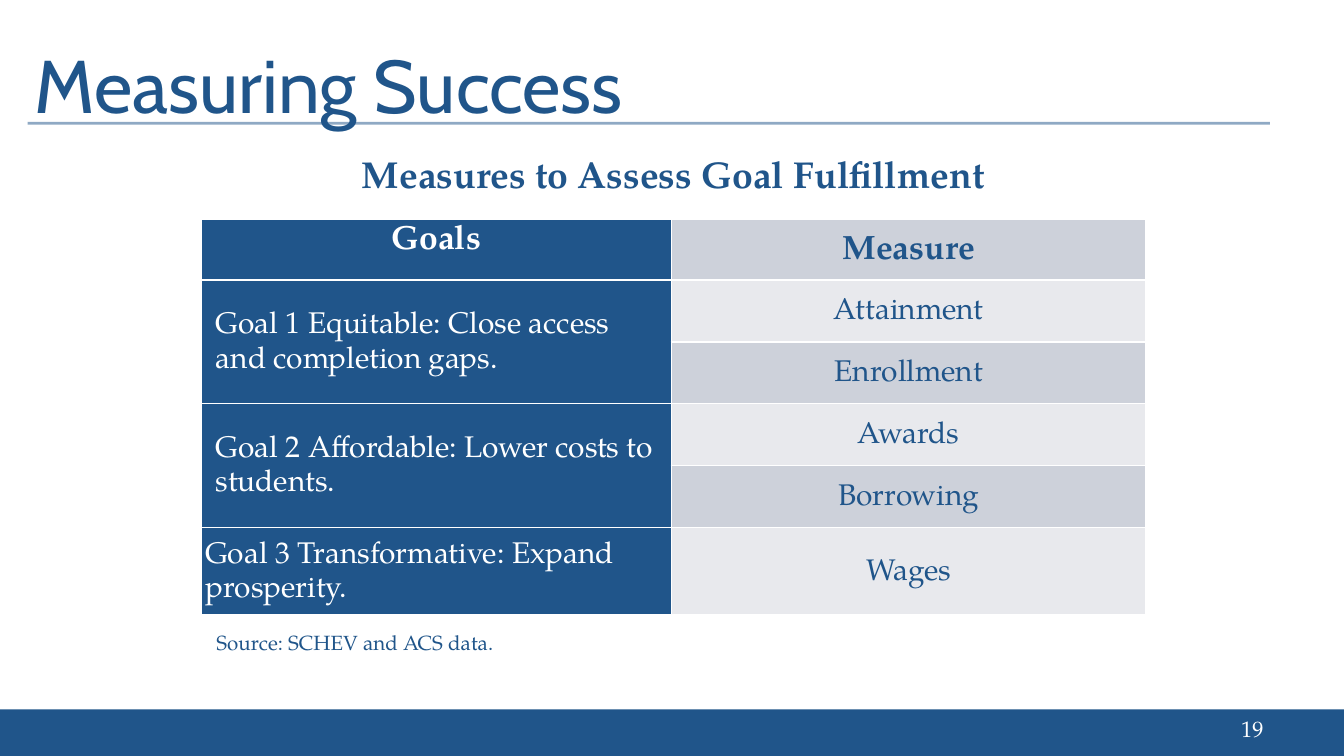
from lxml import etree
from pptx import Presentation
from pptx import util as u
from pptx.dml import color
from pptx.enum import shapes, text
from pptx.oxml import ns

BLUE, WHITE, GREY, PALE = "20558A", "FFFFFF", "CDD1DA", "E8E9ED"
SERIF, SANS = "TeX Gyre Pagella", "Cabin"
LEFT, CENTER, RIGHT = text.PP_ALIGN.LEFT, text.PP_ALIGN.CENTER, text.PP_ALIGN.RIGHT
TOP, MIDDLE = text.MSO_ANCHOR.TOP, text.MSO_ANCHOR.MIDDLE
WIDE, NARROW = (0.28, 0.13), (0.08, 0.05)  # side and top cell margins in cm


def rgb(value):
    return color.RGBColor.from_string(value)


def add_element(parent, tag, **attributes):
    return etree.SubElement(parent, ns.qn(tag), attributes)


class Page:
    def __init__(self, deck):
        self.slide = deck.slides.add_slide(deck.slide_layouts[6])

    def wording(self, frame, words, ink=BLUE, align=LEFT, spacing=None, **font):
        para = frame.paragraphs[0]
        para.alignment = align
        if spacing:
            para.line_spacing = spacing
        span = para.add_run()
        span.text = words
        span.font.color.rgb = rgb(ink)
        values = {"name": SERIF, "size": 16, "bold": False, **font}
        values["size"] = u.Pt(values["size"])
        for name, value in values.items():
            setattr(span.font, name, value)

    def band(self, place, fill):
        box = self.slide.shapes.add_shape(shapes.MSO_SHAPE.RECTANGLE, *map(u.Cm, place))
        box.shadow.inherit = False
        box.fill.solid()
        box.fill.fore_color.rgb = rgb(fill)
        box.line.fill.background()

    def rule(self, ends, ink, width, opacity):
        line = self.slide.shapes.add_connector(shapes.MSO_CONNECTOR.STRAIGHT, *map(u.Cm, ends))
        line.line.color.rgb = rgb(ink)
        line.line.width = u.Pt(width)
        properties = line._element.spPr
        tint = properties.find(".//" + ns.qn("a:srgbClr"))
        add_element(tint, "a:alpha", val=str(opacity * 1000))
        add_element(properties, "a:effectLst")

    def label(self, place, words, anchor=TOP, **style):
        frame = self.slide.shapes.add_textbox(*map(u.Cm, place)).text_frame
        frame.word_wrap = True
        frame.vertical_anchor = anchor
        self.wording(frame, words, **style)

    def table(self, corner, widths, heights):
        size = sum(widths), sum(heights)
        table = self.slide.shapes.add_table(
            len(heights), len(widths), *map(u.Cm, (*corner, *size))).table
        table.first_row = table.horz_banding = False
        for column, width in zip(table.columns, widths):
            column.width = u.Cm(width)
        for row, height in zip(table.rows, heights):
            row.height = u.Cm(height)
        for number, row in enumerate(table.rows):
            for cell in row.cells:
                self.borders(cell, top=3 if number == 1 else 1, bottom=3 if number == 0 else 1)
                cell.fill.background()
        return table

    def borders(self, cell, top, bottom):
        properties = cell._tc.get_or_add_tcPr()
        for side, width in zip("LRTB", (1, 1, top, bottom)):
            line = add_element(properties, "a:ln" + side, w=str(int(u.Pt(width))))
            add_element(add_element(line, "a:solidFill"), "a:srgbClr", val=WHITE)

    def cell(self, cell, words, fill=None, margins=WIDE, anchor=MIDDLE, **style):
        side, edge = map(u.Cm, margins)
        settings = {"margin_left": side, "margin_right": side, "margin_top": edge,
                    "margin_bottom": edge, "vertical_anchor": anchor}
        for name, value in settings.items():
            setattr(cell, name, value)
        if fill:
            cell.fill.solid()
            cell.fill.fore_color.rgb = rgb(fill)
        self.wording(cell.text_frame, words, **style)


def main():
    deck = Presentation()
    deck.slide_width, deck.slide_height = u.Cm(25.4), u.Cm(14.29)
    page = Page(deck)

    # Footer band, title rule and labels
    page.band((-0.02, 13.41, 25.43, 0.89), BLUE)
    page.rule((0.52, 2.33, 24, 2.33), BLUE, 1.5, 50)
    page.label((18.21, 13.39, 5.92, 0.76), "19", MIDDLE, ink=WHITE, align=RIGHT, size=12)
    page.label((0.41, 0.61, 23.04, 1.7), "Measuring Success", name=SANS, size=40)
    page.label((3.84, 11.79, 14.68, 0.74), "Source: SCHEV and ACS data.", size=11)

    # Table caption and column heads
    table = page.table((3.8, 2.92), (8.89, 8.97), [1.2] + [1.17] * 5 + [1.65])
    table.cell(0, 0).merge(table.cell(0, 1))
    page.cell(table.cell(0, 0), "Measures to Assess Goal Fulfillment",
              anchor=TOP, align=CENTER, size=20, bold=True)
    page.cell(table.cell(1, 0), "Goals", BLUE, anchor=TOP,
              ink=WHITE, align=CENTER, size=18, bold=True)
    page.cell(table.cell(1, 1), "Measure", GREY, NARROW,
              align=CENTER, spacing=1.15, size=18, bold=True)

    # Goals, each beside its measures
    goals = [
        ("Goal 1 Equitable: Close access and completion gaps.", ["Attainment", "Enrollment"]),
        ("Goal 2 Affordable: Lower costs to students.", ["Awards", "Borrowing"]),
        ("Goal 3 Transformative: Expand prosperity.", ["Wages"]),
    ]
    row = 2
    for goal, measures in goals:
        first = table.cell(row, 0)
        if len(measures) > 1:
            first.merge(table.cell(row + len(measures) - 1, 0))
        page.cell(first, goal, BLUE, WIDE if len(measures) > 1 else NARROW,
                  ink=WHITE, spacing=1.15)
        for measure in measures:
            page.cell(table.cell(row, 1), measure, GREY if row % 2 else PALE, NARROW,
                      align=CENTER, spacing=1.15)
            row += 1

    deck.save("out.pptx")


if __name__ == "__main__":
    main()
